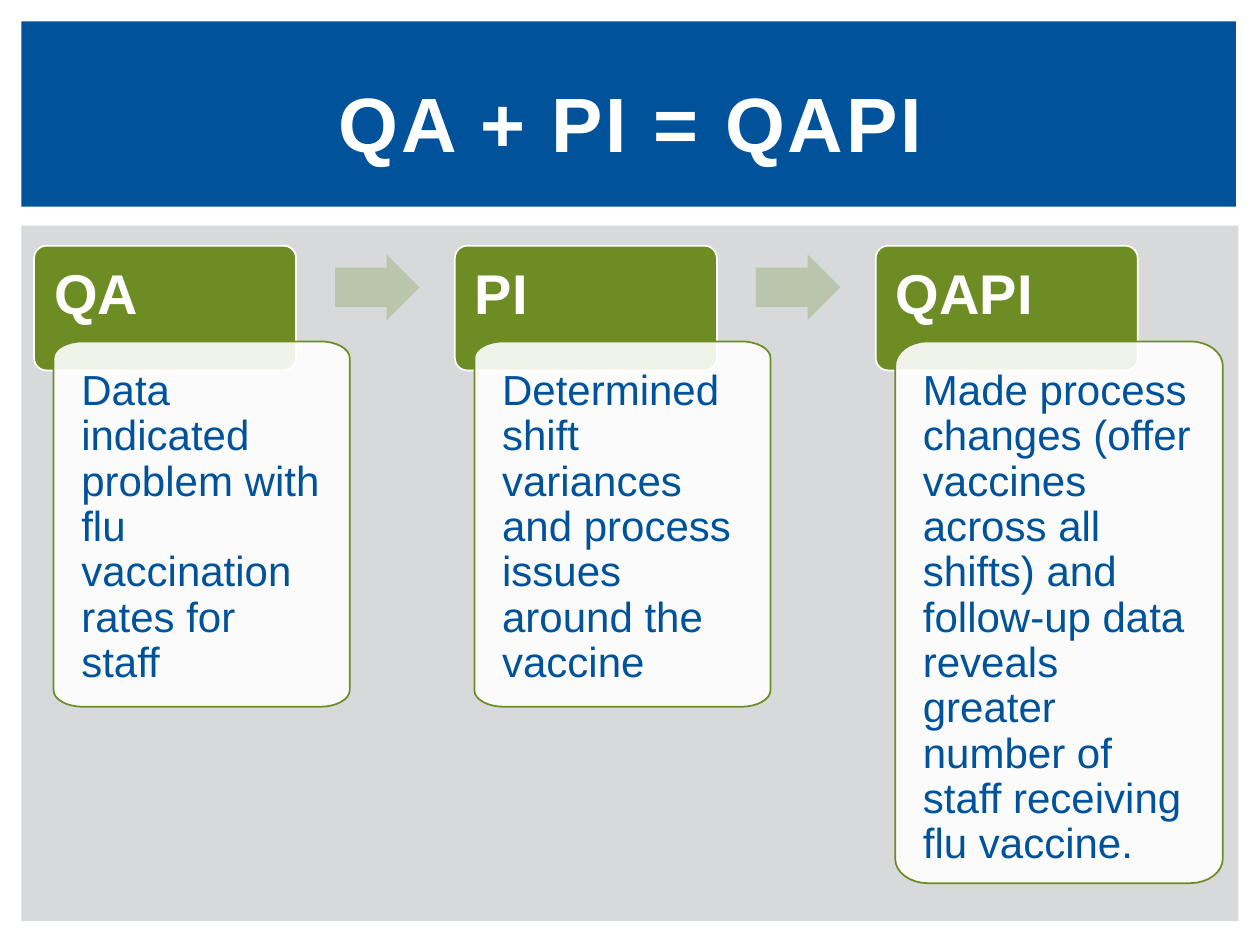
from collections import namedtuple
from math import cos, pi, sin

from lxml.etree import SubElement
from pptx import Presentation
from pptx.dml.color import RGBColor
from pptx.enum.shapes import MSO_SHAPE
from pptx.enum.text import MSO_ANCHOR, PP_ALIGN
from pptx.oxml.ns import qn
from pptx.util import Inches, Pt

COLORS = {"blue": "00539B", "green": "6D8D24", "sage": "BAC5AC",
          "gray": "D8D9DA", "white": "FFFFFF"}
FONT = "Arial"

# Grid of 100 columns by 75 rows on a 10 by 7.5 inch slide
CELL = Inches(0.1)
COLUMNS, ROWS = 100, 75
STEP_PITCH = 33.4
Box = namedtuple("Box", "left top width height")

# Heading, text, card width and card height of each step
STEPS = [
    ("QA", "Data indicated problem with flu vaccination rates for staff",
     23.5, 29),
    ("PI", "Determined shift variances and process issues around the vaccine",
     23.5, 29),
    ("QAPI", "Made process changes (offer vaccines across all shifts) and "
     "follow-up data reveals greater number of staff receiving flu vaccine.",
     26, 43),
]


def cells(count):
    return round(count * CELL)


def color(name):
    return RGBColor.from_string(COLORS[name])


def paint(shape, fill, line=None):
    shape.shadow.inherit = False
    shape.fill.solid()
    shape.fill.fore_color.rgb = color(fill)
    if line:
        shape.line.color.rgb = color(line)
        shape.line.width = Pt(1)
    else:
        shape.line.fill.background()


def add_preset(page, kind, box, fill, line=None):
    shape = page.shapes.add_shape(kind, *map(cells, box))
    paint(shape, fill, line)
    return shape


def add_card_outline(page, box):
    """Rounded card whose corners are wider than they are tall."""
    radius_x, radius_y = box.width * 0.1, box.height * 0.045
    right, bottom = box.left + box.width, box.top + box.height
    centers = [(right - radius_x, bottom - radius_y),
               (box.left + radius_x, bottom - radius_y),
               (box.left + radius_x, box.top + radius_y),
               (right - radius_x, box.top + radius_y)]
    points = []
    for corner, (x, y) in enumerate(centers):
        for step in range(9):
            angle = (corner + step / 8) * pi / 2
            points.append((cells(x + radius_x * cos(angle)),
                           cells(y + radius_y * sin(angle))))
    builder = page.shapes.build_freeform(*points[0])
    builder.add_line_segments(points[1:], close=True)
    return builder.convert_to_shape()


def write(shape, text, size, ink, inset, bold=False, spacing=0.9,
          anchor=MSO_ANCHOR.TOP, align=PP_ALIGN.LEFT):
    frame = shape.text_frame
    frame.word_wrap = True
    frame.vertical_anchor = anchor
    frame.margin_left = frame.margin_right = cells(inset)
    frame.margin_top = frame.margin_bottom = cells(inset)
    para = frame.paragraphs[0]
    span = para.add_run()
    span.text = text
    para.alignment = align
    para.line_spacing = spacing
    para.font.name = FONT
    para.font.size = Pt(size)
    para.font.bold = bold
    para.font.color.rgb = color(ink)
    return span


def add_title(page, box):
    add_preset(page, MSO_SHAPE.RECTANGLE, box, "blue")
    title = page.shapes.add_textbox(
        *map(cells, (box.left + 2.5, box.top + 2.2, box.width - 4.7, 11.5)))
    span = write(title, "QA + PI = QAPI", 44, "white", 0.5, bold=True,
                 spacing=1.0, anchor=MSO_ANCHOR.MIDDLE, align=PP_ALIGN.CENTER)
    # Letter spacing in hundredths of a point
    span.font._element.set("spc", "150")


def add_step(page, box, heading, text):
    # Heading tab
    tab = add_preset(page, MSO_SHAPE.ROUNDED_RECTANGLE,
                     Box(box.left, box.top, 20.8, 9.9), "green", "white")
    tab.adjustments[0] = 0.1
    write(tab, heading, 32, "white", 1.3, bold=True)

    # Card that overlaps the tab
    card = add_card_outline(page, Box(box.left + 1.55, box.top + 7.6,
                                      box.width - 1.55, box.height - 7.6))
    paint(card, "white", "green")
    fill_color = card.fill._xPr.find(qn("a:solidFill"))[0]
    SubElement(fill_color, qn("a:alpha")).set("val", "90000")
    write(card, text, 24, "blue", 2.2)


def add_process(page, box):
    add_preset(page, MSO_SHAPE.RECTANGLE, box, "gray")
    for index, (heading, text, width, height) in enumerate(STEPS):
        left = box.left + 1 + index * STEP_PITCH
        top = box.top + 1.6
        add_step(page, Box(left, top, width + 1.55, height + 7.6),
                 heading, text)
        if index < len(STEPS) - 1:
            arrow = add_preset(page, MSO_SHAPE.RIGHT_ARROW,
                               Box(left + 23.9, top + 0.7, 6.7, 5.2), "sage")
            arrow.adjustments[0] = 0.6


def main():
    deck = Presentation()
    deck.slide_width, deck.slide_height = cells(COLUMNS), cells(ROWS)
    page = deck.slides.add_slide(deck.slide_layouts[6])
    add_process(page, Box(1.7, 17.9, 96.6, 55.2))
    add_title(page, Box(1.7, 1.7, 96.4, 14.7))
    deck.save("out.pptx")


if __name__ == "__main__":
    main()
